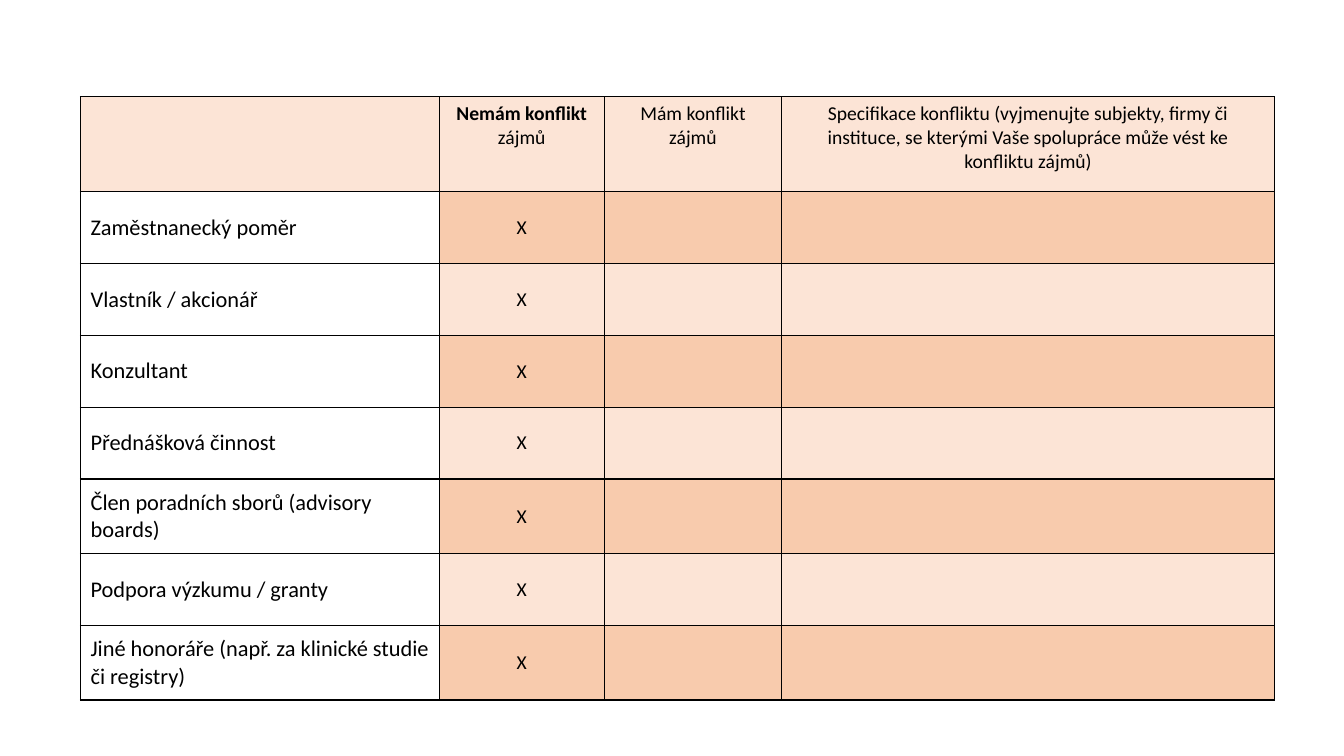
import pptx
import pptx.util
import pptx.dml.color
import pptx.enum.text
import lxml.etree

Cm, Pt = pptx.util.Cm, pptx.util.Pt
ALIGN = pptx.enum.text.PP_ALIGN
ANCHOR = pptx.enum.text.MSO_ANCHOR
LIGHT, DARK, WHITE, BLACK = "FCE4D6", "F8CBAD", "FFFFFF", "000000"

HEADS = [
    "",
    "Nemám konflikt\nzájmů",
    "Mám konflikt zájmů",
    "Specifikace konfliktu (vyjmenujte subjekty, firmy či instituce, "
    "se kterými Vaše spolupráce může vést ke konfliktu zájmů)",
]
TOPICS = [
    "Zaměstnanecký poměr",
    "Vlastník / akcionář",
    "Konzultant",
    "Přednášková činnost",
    "Člen poradních sborů (advisory boards)",
    "Podpora výzkumu / granty",
    "Jiné honoráře (např. za klinické studie či registry)",
]
ROWS = [HEADS] + [[topic, "X", "", ""] for topic in TOPICS]
WIDTHS = [9.04, 4.16, 4.47, 12.42]
HEIGHTS = [2.39, 1.81, 1.81, 1.81, 1.81, 1.88, 1.81, 1.88]


def color(code):
    return pptx.dml.color.RGBColor.from_string(code)


def border(cell):
    props = cell._tc.get_or_add_tcPr()
    for side in ("lnL", "lnR", "lnT", "lnB"):
        line = lxml.etree.SubElement(props, pptx.oxml.ns.qn("a:" + side), w=str(Pt(1)))
        fill = lxml.etree.SubElement(line, pptx.oxml.ns.qn("a:solidFill"))
        lxml.etree.SubElement(fill, pptx.oxml.ns.qn("a:srgbClr"), val=BLACK)


def paint(cell, row, col):
    border(cell)
    shade = DARK if row % 2 else LIGHT
    cell.fill.solid()
    cell.fill.fore_color.rgb = color(WHITE if row and not col else shade)
    cell.vertical_anchor = ANCHOR.MIDDLE if row else ANCHOR.TOP


def write(cell, text, row, col):
    cell.text_frame.text = text
    for para in cell.text_frame.paragraphs:
        para.alignment = ALIGN.CENTER if col else ALIGN.LEFT
        for run in para.runs:
            run.font.name = "Calibri"
            run.font.size = Pt(14 if col else 16)
            run.font.bold = run.text == "Nemám konflikt"
            run.font.color.rgb = color(BLACK)


def main():
    deck = pptx.Presentation()
    deck.slide_width, deck.slide_height = Cm(33.87), Cm(19.05)
    slide = deck.slides.add_slide(deck.slide_layouts[6])
    frame = slide.shapes.add_table(
        len(ROWS), len(WIDTHS), Cm(2.03), Cm(2.44), Cm(sum(WIDTHS)), Cm(sum(HEIGHTS))
    )
    table = frame.table
    table.first_row = table.horz_banding = False
    for col, width in enumerate(WIDTHS):
        table.columns[col].width = Cm(width)
    for row, texts in enumerate(ROWS):
        table.rows[row].height = Cm(HEIGHTS[row])
        for col, text in enumerate(texts):
            cell = table.cell(row, col)
            paint(cell, row, col)
            if text:
                write(cell, text, row, col)
    deck.save("out.pptx")


if __name__ == "__main__":
    main()
